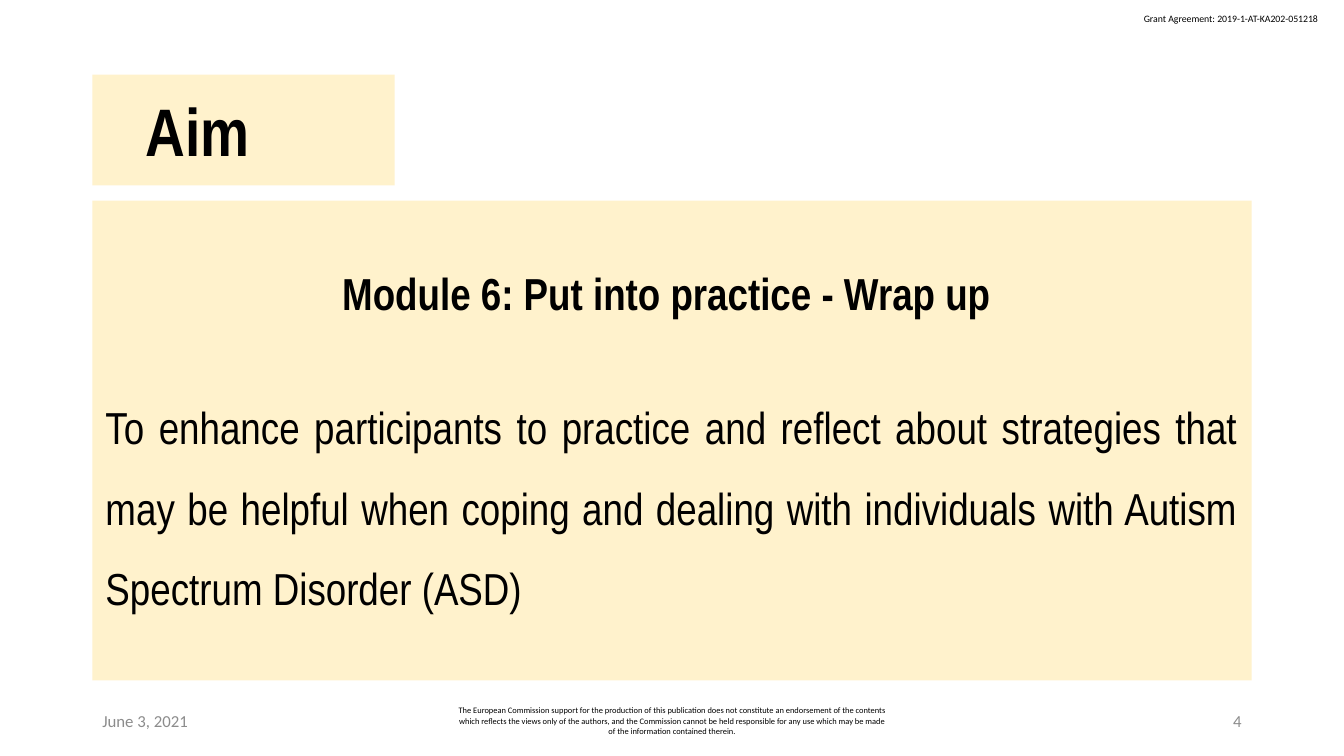
from dataclasses import dataclass

from pptx import Presentation
from pptx import util as u
from pptx.dml.color import RGBColor
from pptx.enum import text
from pptx.oxml.ns import qn
from pptx.shapes.base import BaseShape
from pptx.slide import Slide
from pptx.text.text import TextFrame, _Paragraph

CREAM = RGBColor(0xFF, 0xF2, 0xCC)
BLACK = RGBColor(0, 0, 0)
GREY = RGBColor(0x8C, 0x8C, 0x8C)

# The slide is a grid of 160 columns by 90 rows, each a twelfth of an inch.
CELL = u.Inches(1) / 12
COLUMNS, ROWS = 160, 90
LEFT_COLUMN, FOOTER_ROW, FOOTER_ROWS = 11, 83.4, 4.8

LEFT, CENTER, RIGHT, JUSTIFY = (
    text.PP_ALIGN.LEFT, text.PP_ALIGN.CENTER, text.PP_ALIGN.RIGHT, text.PP_ALIGN.JUSTIFY)
TOP, MIDDLE = text.MSO_ANCHOR.TOP, text.MSO_ANCHOR.MIDDLE

HEADING = "Module 6: Put into practice - Wrap up "
AIM = ("To enhance participants to practice and reflect about strategies that may be "
       "helpful when coping and dealing with individuals with Autism Spectrum Disorder (ASD)")
DISCLAIMER = (
    "The European Commission support for the production of this publication does not "
    "constitute an endorsement of the contents which reflects the views only of the authors, "
    "and the Commission cannot be held responsible for any use which may be made of the "
    "information contained therein.")


@dataclass(frozen=True)
class Area:
    column: float
    row: float
    columns: float
    rows: float


@dataclass(frozen=True)
class Note:
    wording: str
    area: Area
    size: float
    color: RGBColor
    alignment: text.PP_ALIGN = LEFT
    anchor: text.MSO_ANCHOR = MIDDLE
    wrap: bool = True


NOTES = [
    Note("Grant Agreement: 2019-1-AT-KA202-051218", Area(135, 0.96, 23.64, 2.64),
         7, BLACK, anchor=TOP, wrap=False),
    Note("June 3, 2021", Area(LEFT_COLUMN, FOOTER_ROW, 36, FOOTER_ROWS), 12, GREY),
    Note(DISCLAIMER, Area(53, FOOTER_ROW, 54, FOOTER_ROWS), 6, BLACK, CENTER),
    Note("4", Area(113, FOOTER_ROW, 36, FOOTER_ROWS), 12, GREY, RIGHT),
]
TITLE_AREA = Area(LEFT_COLUMN, 8.88, 36, 13.2)
BODY_AREA = Area(LEFT_COLUMN, 23.88, 138, 57.12)


def cells(count: float) -> u.Emu:
    return u.Emu(round(count * CELL))


def apply(target: object, **values: object) -> None:
    for name, value in values.items():
        setattr(target, name, value)


def place(shape: BaseShape, area: Area) -> None:
    apply(shape, left=cells(area.column), top=cells(area.row),
          width=cells(area.columns), height=cells(area.rows))


def style(paragraph: _Paragraph, font: str, size: float, color: RGBColor,
          bold: bool, **layout: object) -> None:
    apply(paragraph, **layout)
    apply(paragraph.font, name=font, size=u.Pt(size), bold=bold)
    paragraph.font.color.rgb = color


def remove_bullet(paragraph: _Paragraph) -> None:
    properties = paragraph._p.get_or_add_pPr()
    properties.set("marL", "0")
    properties.set("indent", "0")
    properties.append(properties.makeelement(qn("a:buNone"), {}))


def add_note(slide: Slide, note: Note) -> None:
    box = slide.shapes.add_textbox(0, 0, 0, 0)
    place(box, note.area)
    frame = box.text_frame
    apply(frame, text=note.wording, word_wrap=note.wrap, vertical_anchor=note.anchor)
    style(frame.paragraphs[0], "Calibri", note.size, note.color, False,
          alignment=note.alignment)


def prepare_panel(shape: BaseShape, area: Area, wording: str) -> TextFrame:
    """Turn a placeholder into a cream panel and return its filled text frame."""
    place(shape, area)
    shape.fill.solid()
    shape.fill.fore_color.rgb = CREAM
    apply(shape.text_frame, text=wording, word_wrap=True, vertical_anchor=MIDDLE,
          auto_size=text.MSO_AUTO_SIZE.NONE, margin_left=u.Inches(0.13),
          margin_right=u.Inches(0.13), margin_top=u.Inches(0.07),
          margin_bottom=u.Inches(0.07))
    return shape.text_frame


def main() -> None:
    presentation = Presentation()
    apply(presentation, slide_width=cells(COLUMNS), slide_height=cells(ROWS))
    slide = presentation.slides.add_slide(presentation.slide_layouts[1])

    for note in NOTES:
        add_note(slide, note)

    title = prepare_panel(slide.shapes.title, TITLE_AREA, "Aim")
    title.margin_left = u.Inches(0.53)
    style(title.paragraphs[0], "Arial Narrow", 48, BLACK, True, alignment=LEFT)

    body = prepare_panel(slide.placeholders[1], BODY_AREA, f"{HEADING}\n{AIM}")
    heading, aim = body.paragraphs
    for paragraph in (heading, aim):
        remove_bullet(paragraph)
    style(heading, "Arial Narrow", 32, BLACK, True, alignment=CENTER, space_before=u.Pt(0))
    style(aim, "Arial Narrow", 32, BLACK, False, alignment=JUSTIFY,
          space_before=u.Pt(38), line_spacing=1.5)

    presentation.save("out.pptx")


if __name__ == "__main__":
    main()
